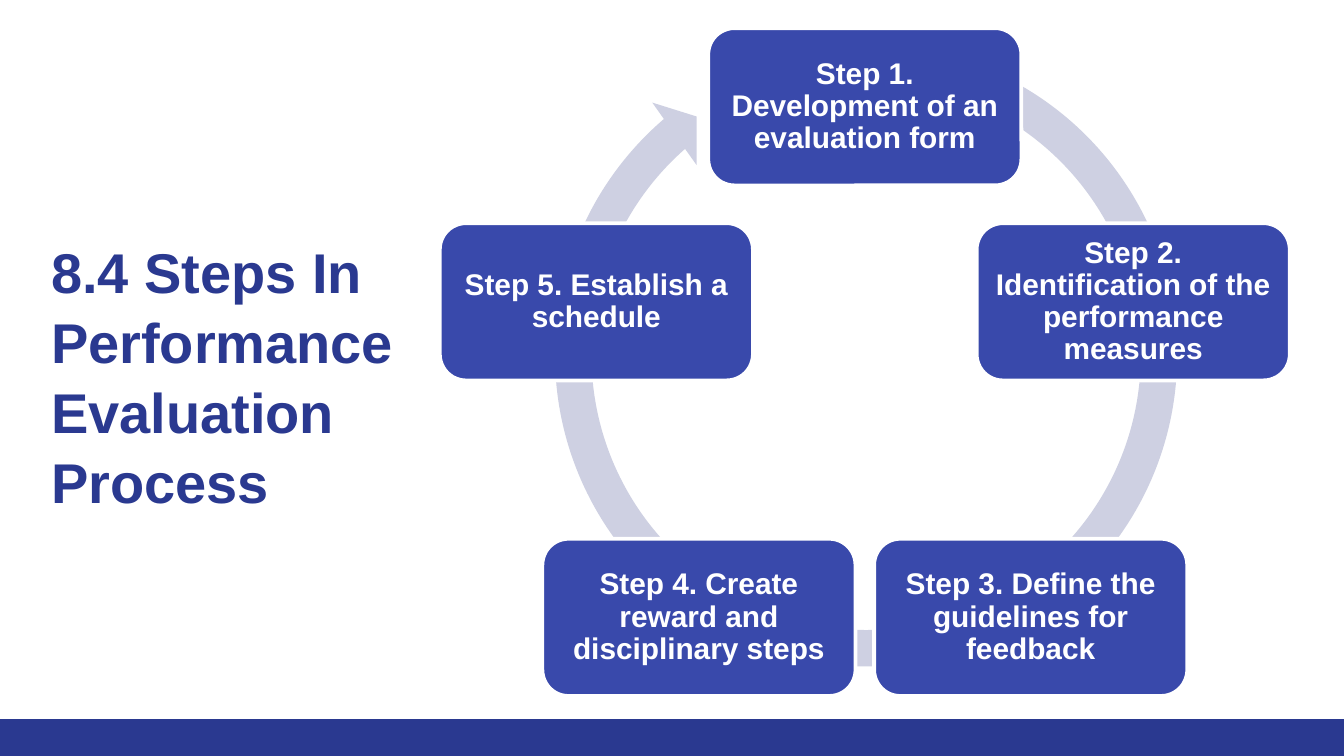
import math
from dataclasses import dataclass

import pptx
import pptx.dml.color
import pptx.enum.shapes
import pptx.enum.text
import pptx.util

COLORS = {"navy": "2A3990", "box": "3949AB", "ring": "CED0E2", "white": "FFFFFF"}
FONT = "Arial"
WIDE = pptx.util.Inches(10)
TALL = pptx.util.Inches(5.625)
COLS = 100
CELL = WIDE / COLS  # square grid cell
ROWS = TALL / CELL

SHAPE = pptx.enum.shapes.MSO_SHAPE
ALIGN = pptx.enum.text.PP_ALIGN
ANCHOR = pptx.enum.text.MSO_ANCHOR


@dataclass
class Area:
    """A rectangle in grid columns and rows."""
    col: float
    row: float
    cols: float
    rows: float

    def frame(self) -> list[int]:
        return [round(n * CELL) for n in (self.col, self.row, self.cols, self.rows)]


STEPS = [
    "Step 1. Development of an evaluation form",
    "Step 2. Identification of the performance measures",
    "Step 3. Define the guidelines for feedback",
    "Step 4. Create reward and disciplinary steps",
    "Step 5. Establish a schedule",
]
BOX_COLS, BOX_ROWS = 23.3, 11.7
MID_COL, MID_ROW, RADIUS = 64.35, 28.95, 21


def rgb(name: str) -> pptx.dml.color.RGBColor:
    return pptx.dml.color.RGBColor.from_string(COLORS[name])


def write(shape, text: str, *, size: float, color: str, align, anchor,
          inset: float, spacing: float) -> None:
    frame = shape.text_frame
    frame.word_wrap = True
    frame.auto_size = pptx.enum.text.MSO_AUTO_SIZE.NONE
    frame.vertical_anchor = anchor
    pad = round(inset * CELL)
    frame.margin_left = frame.margin_right = pad
    frame.margin_top = frame.margin_bottom = pad
    para = frame.paragraphs[0]
    para.alignment = align
    para.line_spacing = spacing
    run = para.add_run()
    run.text = text
    run.font.name = FONT
    run.font.size = pptx.util.Pt(size)
    run.font.bold = True
    run.font.color.rgb = rgb(color)


def draw(slide, kind, area: Area, fill: str, line: str | None = None):
    shape = slide.shapes.add_shape(kind, *area.frame())
    shape.shadow.inherit = False
    shape.fill.solid()
    shape.fill.fore_color.rgb = rgb(fill)
    if line:
        shape.line.color.rgb = rgb(line)
        shape.line.width = pptx.util.Pt(2)
    else:
        shape.line.fill.background()
    return shape


def add_title(slide, area: Area, text: str) -> None:
    title = slide.shapes.title
    title.left, title.top, title.width, title.height = area.frame()
    write(title, text, size=30, color="navy", align=ALIGN.LEFT,
          anchor=ANCHOR.TOP, inset=1, spacing=1.04)


def add_ring(slide, area: Area) -> None:
    ring = draw(slide, SHAPE.CIRCULAR_ARROW, area, "ring")
    # Band width, head angle, end angle, start angle, head width
    for i, value in enumerate((0.055, 3.307, 137.48, 174.03, 0.058)):
        ring.adjustments[i] = value


def add_steps(slide, steps: list[str]) -> None:
    """Place the steps clockwise at equal angles, from the top."""
    for i, text in enumerate(steps):
        angle = math.tau * i / len(steps)
        col = MID_COL + RADIUS * math.sin(angle) - BOX_COLS / 2
        row = MID_ROW - RADIUS * math.cos(angle) - BOX_ROWS / 2
        box = draw(slide, SHAPE.ROUNDED_RECTANGLE,
                   Area(col, row, BOX_COLS, BOX_ROWS), "box", "white")
        write(box, text, size=16, color="white", align=ALIGN.CENTER,
              anchor=ANCHOR.MIDDLE, inset=0.7, spacing=0.9)


def main() -> None:
    deck = pptx.Presentation()
    deck.slide_width, deck.slide_height = WIDE, TALL
    slide = deck.slides.add_slide(deck.slide_layouts.get_by_name("Title Only"))
    draw(slide, SHAPE.RECTANGLE, Area(0, ROWS - 2.75, COLS, 2.75), "navy")
    add_title(slide, Area(2.8, 16.5, 28, 25.3),
              "8.4 Steps In Performance Evaluation Process")
    add_ring(slide, Area(39.8, 1.8, 49.3, 49.3))
    add_steps(slide, STEPS)
    deck.save("out.pptx")


if __name__ == "__main__":
    main()
